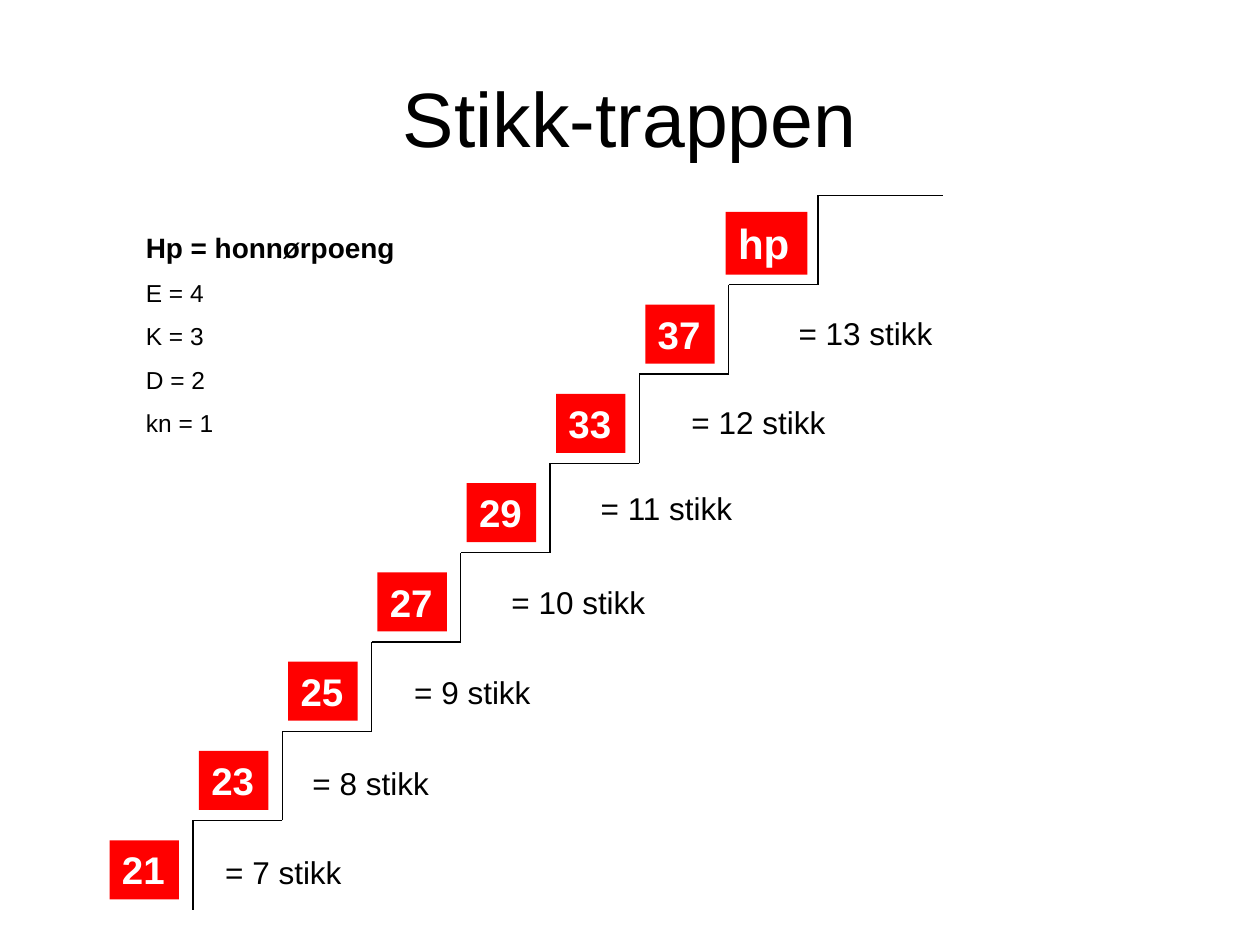
import pptx
import pptx.dml.color
import pptx.enum.shapes
import pptx.enum.text
import pptx.oxml
import pptx.oxml.ns
import pptx.util

Cm = pptx.util.Cm
Pt = pptx.util.Pt
Anchor = pptx.enum.text.MSO_ANCHOR
Align = pptx.enum.text.PP_ALIGN

# Content
TITLE = "Stikk-trappen"
POINTS = ["Hp = honnørpoeng", "E = 4", "K = 3", "D = 2", "kn = 1"]
# Points needed, tricks won, left and top of the trick label (cm)
STEPS = [
    ("21", "= 7 stikk", 4.29, 17.07),
    ("23", "= 8 stikk", 6.05, 15.27),
    ("25", "= 9 stikk", 8.1, 13.44),
    ("27", "= 10 stikk", 10.06, 11.63),
    ("29", "= 11 stikk", 11.86, 9.73),
    ("33", "= 12 stikk", 13.69, 8.0),
    ("37", "= 13 stikk", 15.85, 6.2),
]
TOP_STEP = "hp"

# Staircase geometry (cm)
STAIR_LEFT, STAIR_BOTTOM = 3.89, 18.34
STEP = 1.8
TOP_TREAD = 2.51

BLACK, WHITE, RED = "000000", "FFFFFF", "FF0000"

presentation = pptx.Presentation()
presentation.slide_width, presentation.slide_height = Cm(25.4), Cm(19.05)
slide = presentation.slides.add_slide(presentation.slide_layouts[6])


def color(value):
    return pptx.dml.color.RGBColor.from_string(value)


def write(shape, lines, size, value=BLACK, bold=False, align=Align.LEFT, anchor=Anchor.TOP):
    frame = shape.text_frame
    frame.word_wrap = True
    frame.vertical_anchor = anchor
    frame.text = "\n".join(lines)
    for paragraph in frame.paragraphs:
        paragraph.alignment = align
        for run in paragraph.runs:
            run.font.name = "Arial"
            run.font.size = Pt(size)
            run.font.bold = bold
            run.font.color.rgb = color(value)


def add_text(left, top, width, height, lines, size, **style):
    shape = slide.shapes.add_textbox(Cm(left), Cm(top), Cm(width), Cm(height))
    write(shape, lines, size, **style)
    return shape


def add_box(left, top, width, height, text, size):
    shape = slide.shapes.add_shape(
        pptx.enum.shapes.MSO_SHAPE.RECTANGLE, Cm(left), Cm(top), Cm(width), Cm(height))
    shape.shadow.inherit = False
    shape.fill.solid()
    shape.fill.fore_color.rgb = color(RED)
    shape.line.fill.background()
    write(shape, [text], size, WHITE, bold=True)


def add_line(x1, y1, x2, y2):
    line = slide.shapes.add_connector(
        pptx.enum.shapes.MSO_CONNECTOR.STRAIGHT, Cm(x1), Cm(y1), Cm(x2), Cm(y2))
    line.line.color.rgb = color(BLACK)
    line.line.width = Pt(0.75)
    properties = line._element.spPr
    properties.append(pptx.oxml.parse_xml(
        "<a:effectLst %s/>" % pptx.oxml.ns.nsdecls("a")))


def add_stair(index, tread=STEP):
    x, y = STAIR_LEFT + index * STEP, STAIR_BOTTOM - index * STEP
    add_line(x, y, x, y - STEP)
    add_line(x, y - STEP, x + tread, y - STEP)
    return x, y


# Title
add_text(1.27, 0.76, 22.86, 3.18, [TITLE], 44, align=Align.CENTER, anchor=Anchor.MIDDLE)

# Staircase with the points needed and the tricks won
for index, (points, tricks, left, top) in enumerate(STEPS):
    x, y = add_stair(index)
    add_box(x - 1.68, y - 1.4, 1.4, 1.19, points, 22)
    add_text(left, top, 3.99, 1.02, [tricks], 18)

x, y = add_stair(len(STEPS), TOP_TREAD)
add_box(x - 1.86, y - 1.47, 1.65, 1.27, TOP_STEP, 24)

# Values of the honours
legend = add_text(2.69, 4.52, 6.4, 4.47, POINTS, 14)
heading, *values = legend.text_frame.paragraphs
heading.runs[0].font.size = Pt(16)
heading.runs[0].font.bold = True
for paragraph in values:
    paragraph.space_before = Pt(8)

presentation.save("out.pptx")
